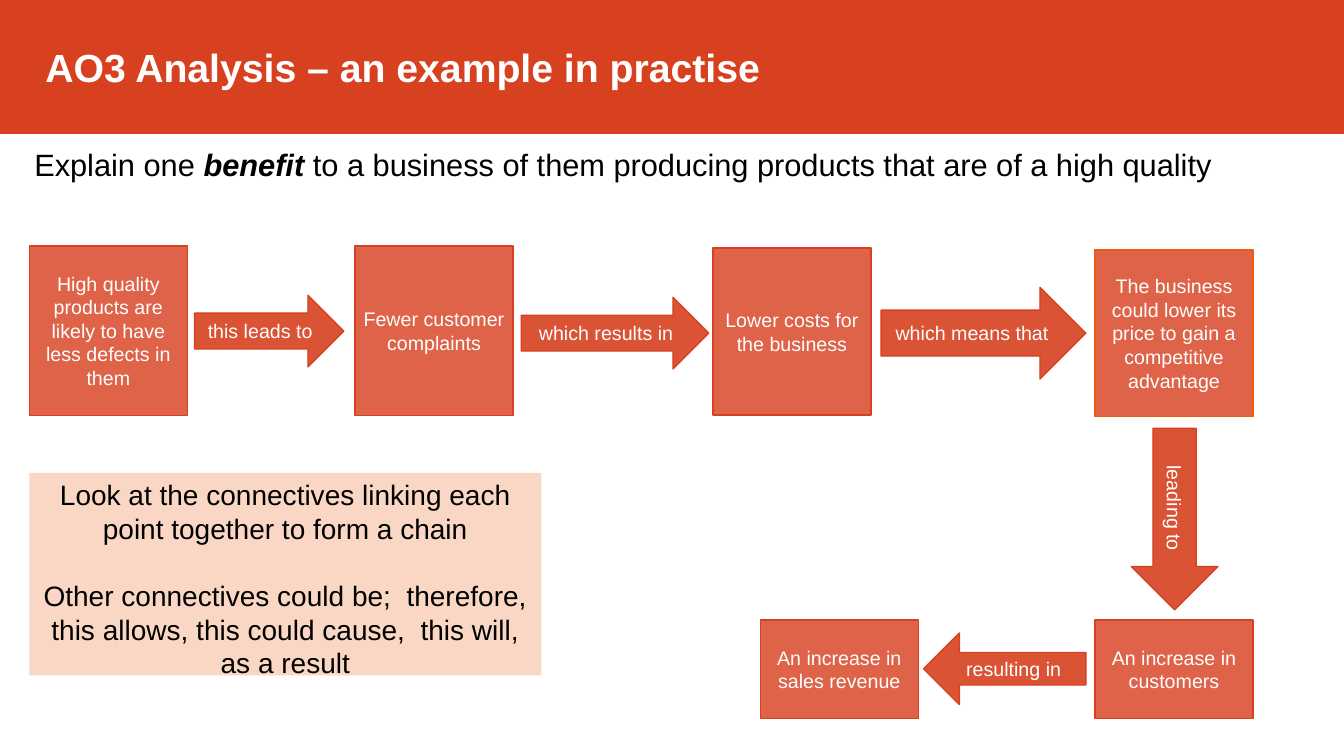
from lxml.etree import SubElement
from pptx import Presentation
from pptx.dml.color import RGBColor
from pptx.enum.shapes import MSO_SHAPE
from pptx.enum.text import MSO_ANCHOR, MSO_AUTO_SIZE, PP_ALIGN
from pptx.oxml.ns import qn
from pptx.util import Inches, Pt

RED = RGBColor(0xD7, 0x41, 0x20)
ORANGE = RGBColor(0xEA, 0x5B, 0x0C)
WHITE = RGBColor(0xFF, 0xFF, 0xFF)
BLACK = RGBColor(0, 0, 0)


class ChainSlide:
    """One slide with a chain of boxes and arrows."""
    font = "Arial"
    inset = Inches(0.05)
    label_size = 14
    line_height = 0.22  # inches per line of a label

    def __init__(self, prs):
        self.s = prs.slides.add_slide(prs.slide_layouts[6])

    def shape(self, shapes, kind, x, y, w, h, fill, line=None, opacity=100):
        sp = shapes.add_shape(kind, Inches(x), Inches(y), Inches(w), Inches(h))
        sp.shadow.inherit = False
        sp.fill.solid()
        sp.fill.fore_color.rgb = fill
        if opacity < 100:
            color = sp.fill._xPr.find(qn("a:solidFill"))[0]
            SubElement(color, qn("a:alpha")).set("val", str(opacity * 1000))
        if line is None:
            sp.line.fill.background()
        else:
            sp.line.color.rgb = line
            sp.line.width = Pt(1)
        return sp

    def frame(self, sp, anchor=MSO_ANCHOR.TOP):
        tf = sp.text_frame
        tf.word_wrap = True
        tf.auto_size = MSO_AUTO_SIZE.NONE
        tf.vertical_anchor = anchor
        tf.margin_left = tf.margin_right = self.inset
        tf.margin_top = tf.margin_bottom = self.inset
        return tf

    def text(self, shapes, x, y, w, h, anchor=MSO_ANCHOR.TOP):
        sp = shapes.add_textbox(Inches(x), Inches(y), Inches(w), Inches(h))
        self.frame(sp, anchor)
        return sp

    def run(self, p, text, size, color, bold=False, italic=False):
        r = p.add_run()
        r.text = text
        r.font.name, r.font.size = self.font, Pt(size)
        r.font.bold, r.font.italic = bold, italic
        r.font.color.rgb = color

    def label(self, shapes, cx, cy, w, text, lines=1, rotation=0):
        h = 0.1 + lines * self.line_height
        sp = self.text(shapes, cx - w / 2, cy - h / 2, w, h, MSO_ANCHOR.MIDDLE)
        sp.rotation = rotation
        p = sp.text_frame.paragraphs[0]
        p.alignment = PP_ALIGN.CENTER
        self.run(p, text, self.label_size, WHITE)

    def box(self, x, y, h, text, lines, line=RED, w=1.57):
        shapes = self.s.shapes.add_group_shape().shapes
        self.shape(shapes, MSO_SHAPE.RECTANGLE, x, y, w, h, RED, line, 82)
        self.label(shapes, x + w / 2, y + h / 2, w, text, lines)

    def arrow(self, x, y, w, h, text, kind=MSO_SHAPE.RIGHT_ARROW,
              shaft=0.5, down=False):
        shapes = self.s.shapes.add_group_shape().shapes
        sp = self.shape(shapes, kind, x, y, w, h, RED, RED, 90)
        sp.adjustments[0] = shaft
        sp.rotation = 90 if down else 0
        # The label leaves out half of the arrow's head
        cx, cy, shift = x + w / 2, y + h / 2, h / 8
        if down:
            cy -= shift
        elif kind == MSO_SHAPE.LEFT_ARROW:
            cx += shift
        else:
            cx -= shift
        self.label(shapes, cx, cy, w - 2 * shift, text, rotation=sp.rotation)

    def title(self, text):
        shapes = self.s.shapes.add_group_shape().shapes
        self.shape(shapes, MSO_SHAPE.RECTANGLE, 0, 0, 13.33, 1.32, RED, RED)
        sp = self.text(shapes, 0, 0.4, 13.33, 0.53, MSO_ANCHOR.MIDDLE)
        p = sp.text_frame.paragraphs[0]
        p._p.get_or_add_pPr().set("marL", str(Inches(0.4)))
        self.run(p, text, 28, WHITE, bold=True)

    def question(self, before, key, after):
        sp = self.text(self.s.shapes, 0.29, 1.4, 12.75, 0.45)
        p = sp.text_frame.paragraphs[0]
        p.space_before = Pt(12)
        self.run(p, before, 22, BLACK)
        self.run(p, key, 22, BLACK, bold=True, italic=True)
        self.run(p, after, 22, BLACK)

    def note(self, first, second):
        sp = self.shape(self.s.shapes, MSO_SHAPE.RECTANGLE,
                        0.29, 4.69, 5.08, 2.01, ORANGE, opacity=24)
        tf = self.frame(sp)
        for p, text in ((tf.paragraphs[0], first), (tf.add_paragraph(), second)):
            p.alignment = PP_ALIGN.CENTER
            self.run(p, text, 20, BLACK)
        p.space_before = Pt(24)


def main():
    prs = Presentation()
    prs.slide_width, prs.slide_height = Inches(13.33), Inches(7.5)
    slide = ChainSlide(prs)

    # Heading and question
    slide.title("AO3 Analysis – an example in practise")
    slide.question("Explain one ", "benefit", " to a business of them producing "
                   "products that are of a high quality")

    # Upper row of the chain
    slide.box(0.29, 2.44, 1.68, "High quality products are likely to have "
              "less defects in them", 5)
    slide.arrow(1.93, 2.93, 1.48, 0.71, "this leads to")
    slide.box(3.52, 2.44, 1.68, "Fewer customer complaints", 2)
    slide.arrow(5.17, 2.95, 1.86, 0.71, "which results in")
    slide.box(7.07, 2.46, 1.66, "Lower costs for the business", 2)
    slide.arrow(8.74, 2.85, 2.03, 0.91, "which means that")
    slide.box(10.86, 2.48, 1.65, "The business could lower its price to gain "
              "a competitive advantage", 5, line=ORANGE)

    # Down and back along the lower row
    slide.arrow(10.75, 4.72, 1.8, 0.86, "leading to", down=True)
    slide.box(10.86, 6.15, 0.98, "An increase in customers", 2)
    slide.arrow(9.16, 6.28, 1.61, 0.71, "resulting in",
                MSO_SHAPE.LEFT_ARROW, shaft=0.455)
    slide.box(7.54, 6.15, 0.98, "An increase in sales revenue", 2)

    # Note on connectives
    slide.note("Look at the connectives linking each point together to form a chain",
               "Other connectives could be;  therefore, this allows, "
               "this could cause,  this will, as a result")

    prs.save("out.pptx")


if __name__ == "__main__":
    main()
